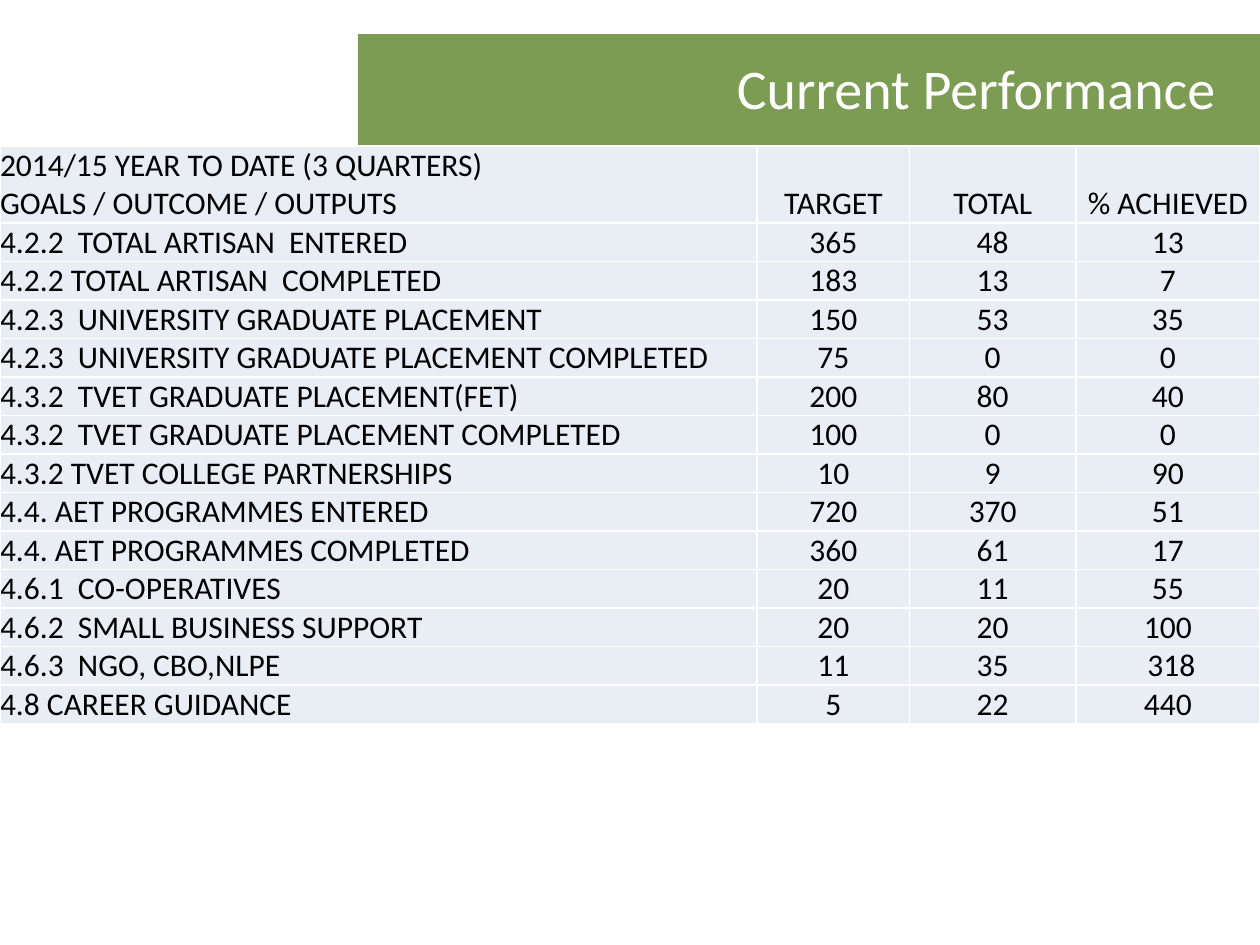
from dataclasses import dataclass

from lxml import etree
from pptx import Presentation
from pptx.dml.color import RGBColor
from pptx.enum.shapes import MSO_SHAPE
from pptx.enum.text import MSO_ANCHOR, PP_ALIGN
from pptx.oxml.ns import qn
from pptx.util import Pt

RECT = MSO_SHAPE.RECTANGLE
MIDDLE, BOTTOM = MSO_ANCHOR.MIDDLE, MSO_ANCHOR.BOTTOM
LEFT, CENTER, RIGHT = PP_ALIGN.LEFT, PP_ALIGN.CENTER, PP_ALIGN.RIGHT
WIDE, HIGH = 720, 540


@dataclass(frozen=True)
class Theme:
    font: str = "Calibri"
    white: str = "FFFFFF"
    black: str = "000000"
    green: str = "7B9C52"
    pale: str = "E9EDF4"
    head: int = 32
    body: int = 18
    rule: int = 1


def assign(item, values):
    for name, value in values.items():
        setattr(item, name, value)


class Deck:
    def __init__(self, theme):
        self.theme = theme
        self.file = Presentation()
        assign(self.file, {"slide_width": Pt(WIDE), "slide_height": Pt(HIGH)})
        self.slide = self.file.slides.add_slide(self.file.slide_layouts[5])

    def label(self, para, text, size, color, align):
        para.text = text
        para.alignment = align
        assign(para.font, {"name": self.theme.font, "size": Pt(size), "bold": False})
        para.font.color.rgb = RGBColor.from_string(color)

    def bar(self, left, top, width, height):
        shape = self.slide.shapes.add_shape(
            RECT, Pt(left), Pt(top), Pt(width), Pt(height))
        shape.shadow.inherit = False
        shape.fill.solid()
        shape.fill.fore_color.rgb = RGBColor.from_string(self.theme.green)
        shape.line.fill.background()

    def title(self, text, left, top, width, height):
        shape = self.slide.shapes.title
        assign(shape, {"left": Pt(left), "top": Pt(top),
                       "width": Pt(width), "height": Pt(height)})
        frame = shape.text_frame
        assign(frame, {"vertical_anchor": MIDDLE, "word_wrap": True})
        self.label(frame.paragraphs[0], text, self.theme.head,
                   self.theme.white, RIGHT)
        # Bring the title in front of the bar
        self.slide.shapes._spTree.append(shape._element)

    def border(self, cell):
        props = cell._tc.get_or_add_tcPr()
        for side in ("lnL", "lnR", "lnT", "lnB"):
            line = etree.SubElement(props, qn(f"a:{side}"), w=str(Pt(self.theme.rule)))
            fill = etree.SubElement(line, qn("a:solidFill"))
            etree.SubElement(fill, qn("a:srgbClr"), val=self.theme.white)

    def cell(self, cell, text, align):
        self.border(cell)
        cell.fill.solid()
        cell.fill.fore_color.rgb = RGBColor.from_string(self.theme.pale)
        assign(cell, {"margin_left": 0, "margin_right": 0, "margin_top": 0,
                      "margin_bottom": 0, "vertical_anchor": BOTTOM})
        self.label(cell.text_frame.paragraphs[0], text, self.theme.body,
                   self.theme.black, align)

    def table(self, rows, left, top, widths, step):
        height = step * (len(rows) + 1)
        table = self.slide.shapes.add_table(
            len(rows), len(widths), Pt(left), Pt(top),
            Pt(sum(widths)), Pt(height)).table
        assign(table, {"first_row": False, "horz_banding": False})
        for column, width in zip(table.columns, widths):
            column.width = Pt(width)
        for r, row in enumerate(rows):
            # The heading row holds two lines
            table.rows[r].height = Pt(step if r else 2 * step)
            for c, text in enumerate(row):
                self.cell(table.cell(r, c), text, CENTER if c else LEFT)


ROWS = [
    ("2014/15 YEAR TO DATE (3 QUARTERS) \vGOALS / OUTCOME / OUTPUTS",
     "TARGET", "TOTAL", "% ACHIEVED"),
    ("4.2.2  TOTAL ARTISAN  ENTERED", "365", "48", "13"),
    ("4.2.2 TOTAL ARTISAN  COMPLETED", "183", "13", "7"),
    ("4.2.3  UNIVERSITY GRADUATE PLACEMENT", "150", "53", "35"),
    ("4.2.3  UNIVERSITY GRADUATE PLACEMENT COMPLETED", "75", "0", "0"),
    ("4.3.2  TVET GRADUATE PLACEMENT(FET)", "200", "80", "40"),
    ("4.3.2  TVET GRADUATE PLACEMENT COMPLETED", "100", "0", "0"),
    ("4.3.2 TVET COLLEGE PARTNERSHIPS", "10", "9", "90"),
    ("4.4. AET PROGRAMMES ENTERED", "720", "370", "51"),
    ("4.4. AET PROGRAMMES COMPLETED", "360", "61", "17"),
    ("4.6.1  CO-OPERATIVES", "20", "11", "55"),
    ("4.6.2  SMALL BUSINESS SUPPORT", "20", "20", "100"),
    ("4.6.3  NGO, CBO,NLPE", "11", "35", " 318"),
    ("4.8 CAREER GUIDANCE", "5", "22", "440"),
]


def main():
    deck = Deck(Theme())
    # Heading band
    deck.bar(204.5, 19.5, WIDE - 204.5, 65.5)
    deck.title("Current Performance", 54, 4.5, 648, 90)
    # Results table
    deck.table(ROWS, 0, 83.5, (432.7, 87.1, 95, 105.2), 21.6)
    deck.file.save("out.pptx")


if __name__ == "__main__":
    main()
